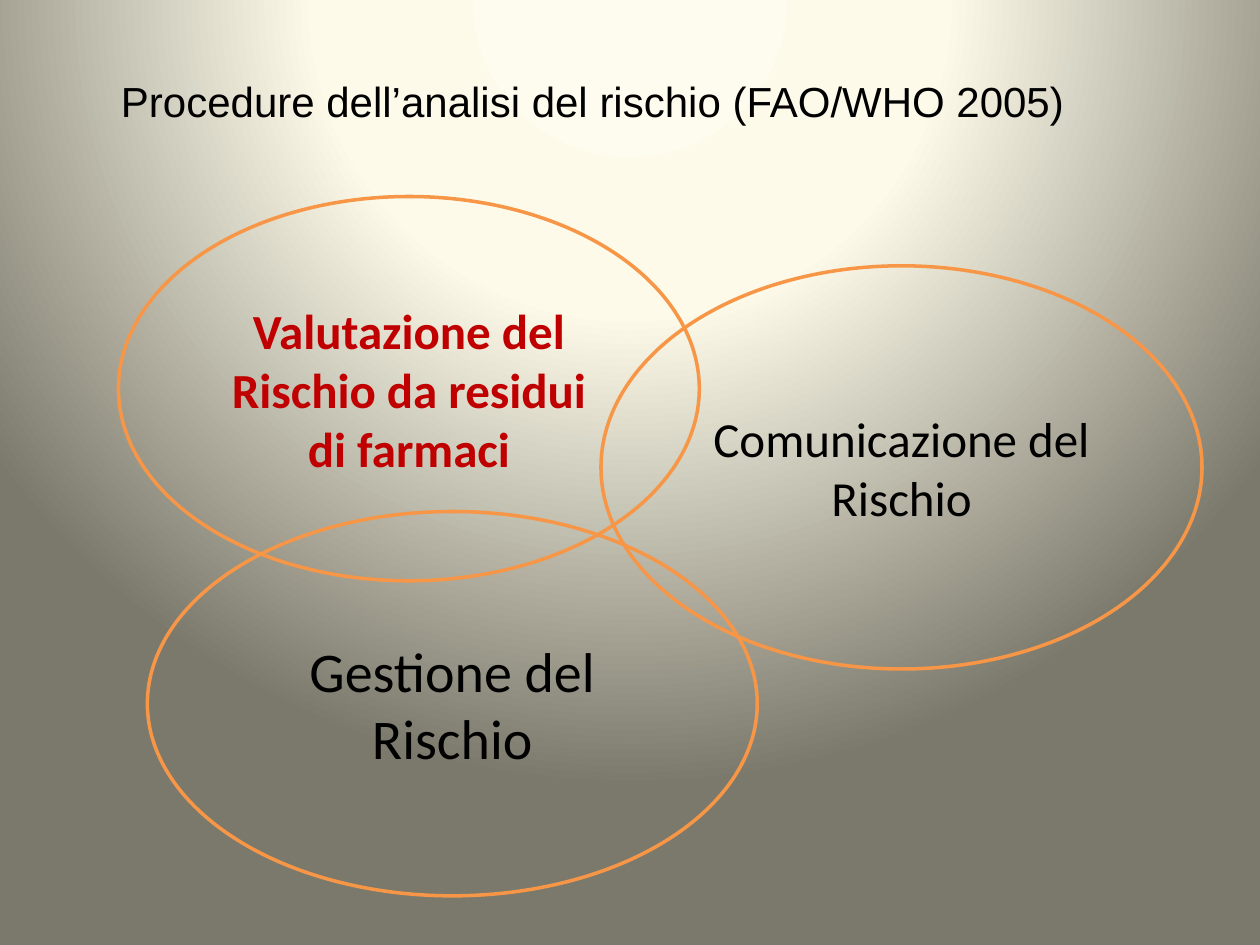
from dataclasses import dataclass

import pptx
import pptx.util
import pptx.dml.color
import pptx.enum.shapes
import pptx.enum.text
import pptx.oxml
import pptx.oxml.ns

Inches = pptx.util.Inches
Align = pptx.enum.text.PP_ALIGN
Anchor = pptx.enum.text.MSO_ANCHOR


@dataclass(frozen=True)
class Theme:
    ink: str = "000000"
    accent: str = "C00000"
    ring: str = "F79646"
    glow: tuple = ((0, "FEFCEE"), (40, "FDFAEA"), (100, "7B796B"))
    head: str = "Arial"
    body: str = "Calibri"
    small: int = 24
    mid: int = 28
    large: int = 32
    line: int = 2


THEME = Theme()


def color(code):
    return pptx.dml.color.RGBColor.from_string(code)


def write(shape, text, size, font=THEME.body, ink=THEME.ink, bold=False,
          align=Align.CENTER, anchor=Anchor.MIDDLE, wrap=True):
    frame = shape.text_frame
    frame.word_wrap = wrap
    frame.vertical_anchor = anchor
    para = frame.paragraphs[0]
    para.alignment = align
    run = para.add_run()
    run.text = text
    run.font.name = font
    run.font.size = pptx.util.Pt(size)
    run.font.bold = bold
    run.font.color.rgb = color(ink)


def backdrop(slide):
    """Fill the background with a round glow centred above the slide."""
    slide.background.fill.solid()
    stops = "".join(
        f'<a:gs pos="{pos * 1000}"><a:srgbClr val="{code}"/></a:gs>'
        for pos, code in THEME.glow)
    glow = pptx.oxml.parse_xml(
        f'<a:gradFill {pptx.oxml.ns.nsdecls("a")} rotWithShape="1">'
        f'<a:gsLst>{stops}</a:gsLst><a:path path="circle">'
        '<a:fillToRect l="50000" t="-80000" r="50000" b="180000"/>'
        '</a:path></a:gradFill>')
    qn = pptx.oxml.ns.qn
    solid = slide.element.find(f".//{qn('p:bgPr')}/{qn('a:solidFill')}")
    solid.getparent().replace(solid, glow)


def heading(slide, box, text):
    title = slide.shapes.title
    title.left, title.top, title.width, title.height = map(Inches, box)
    write(title, text, THEME.small, font=THEME.head, align=Align.LEFT,
          anchor=Anchor.TOP, wrap=False)
    title.text_frame.auto_size = pptx.enum.text.MSO_AUTO_SIZE.SHAPE_TO_FIT_TEXT


def ring(slide, box, text, size, **style):
    oval = slide.shapes.add_shape(
        pptx.enum.shapes.MSO_SHAPE.OVAL, *map(Inches, box))
    oval.shadow.inherit = False
    oval.fill.background()
    oval.line.color.rgb = color(THEME.ring)
    oval.line.width = pptx.util.Pt(THEME.line)
    write(oval, text, size, **style)


def main():
    deck = pptx.Presentation()
    deck.slide_width, deck.slide_height = Inches(10), Inches(7.5)
    slide = deck.slides.add_slide(deck.slide_layouts.get_by_name("Title Only"))
    backdrop(slide)
    heading(slide, (0.86, 0.55, 8.25, 0.51),
            "Procedure dell’analisi del rischio (FAO/WHO 2005)")
    ring(slide, (4.77, 2.11, 4.77, 3.2), "Comunicazione del Rischio", THEME.mid)
    ring(slide, (1.17, 4.06, 4.84, 3.05), "Gestione del Rischio", THEME.large)
    ring(slide, (0.94, 1.56, 4.61, 3.05),
         "Valutazione del Rischio da residui di farmaci", THEME.mid,
         ink=THEME.accent, bold=True)
    deck.save("out.pptx")


if __name__ == "__main__":
    main()
